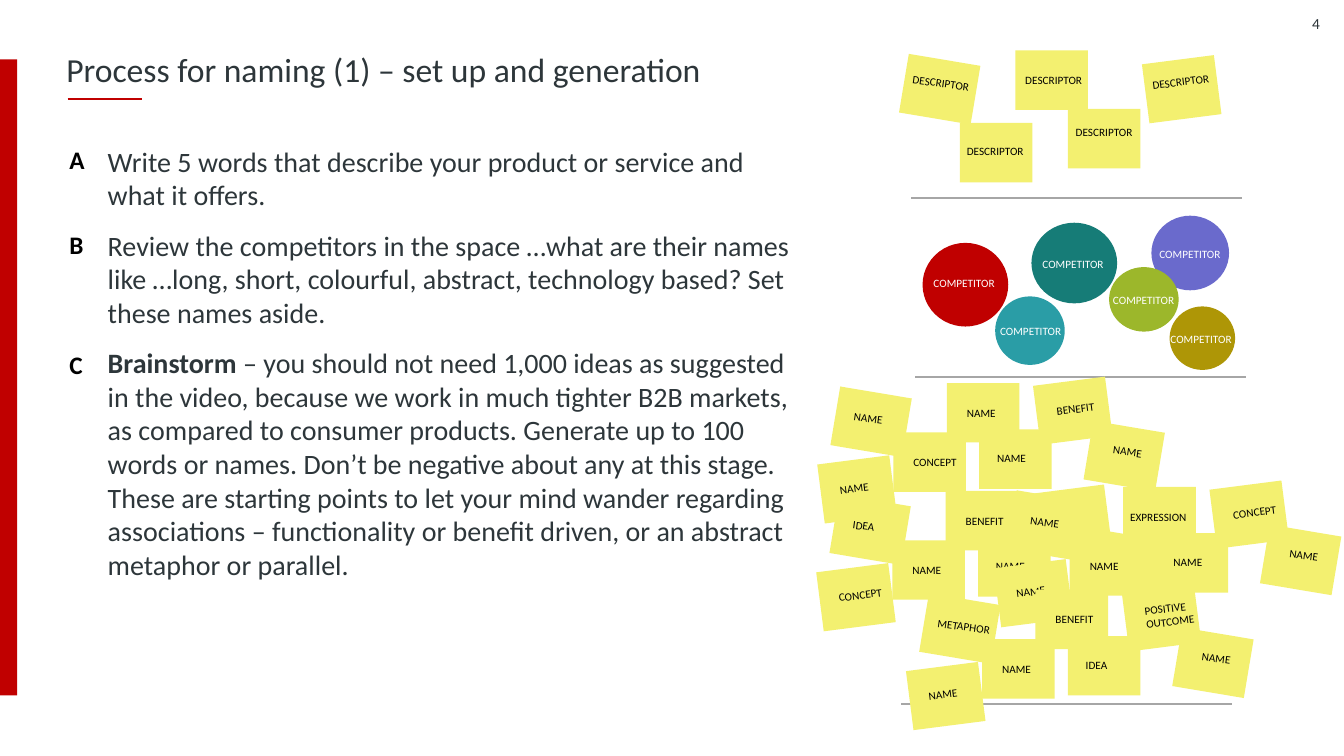
from dataclasses import dataclass

from pptx import Presentation
from pptx.dml.color import RGBColor
from pptx.enum.shapes import MSO_CONNECTOR, MSO_SHAPE
from pptx.enum.text import MSO_ANCHOR, MSO_AUTO_SIZE, PP_ALIGN
from pptx.oxml.ns import qn
from pptx.util import Inches, Pt
from lxml.etree import SubElement

RED, INK, BLACK, WHITE = "C00000", "2D363A", "000000", "FFFFFF"
YELLOW, GREY = "F3F070", "A6A6A6"
NOTE_W, NOTE_H = 0.72, 0.59
RIGHT, LEFT = 9.5, -7.3  # tilts of the notes
LABEL_H = 0.24


@dataclass
class Note:
    x: float
    y: float
    label_x: float
    label_y: float
    label_w: float = 0.82
    tilt: float = 0


@dataclass
class Competitor:
    x: float
    y: float
    w: float
    h: float
    color: str
    label_x: float
    label_y: float


@dataclass
class Cluster:
    x: float
    y: float
    words: list[str]


def rgb(color: str) -> RGBColor:
    return RGBColor.from_string(color)


def add_text(shapes, x: float, y: float, w: float, h: float, paragraphs, *,
             size: float, color: str = INK, bold: bool = False, tilt: float = 0,
             align=None, anchor=MSO_ANCHOR.TOP, grow: bool = False,
             spacing: float | None = None, after: float = 0) -> None:
    """Each paragraph is a string or a list of (text, bold) runs."""
    tb = shapes.add_textbox(Inches(x), Inches(y), Inches(w), Inches(h))
    tb.rotation = tilt
    tf = tb.text_frame
    tf.word_wrap = True
    tf.vertical_anchor = anchor
    if grow:
        tf.auto_size = MSO_AUTO_SIZE.SHAPE_TO_FIT_TEXT
    if isinstance(paragraphs, str):
        paragraphs = [paragraphs]
    for i, runs in enumerate(paragraphs):
        p = tf.add_paragraph() if i else tf.paragraphs[0]
        p.alignment = align
        p.line_spacing = spacing
        p.space_after = Pt(after)
        for text, is_bold in [(runs, bold)] if isinstance(runs, str) else runs:
            r = p.add_run()
            r.text = text
            r.font.name = "Calibri"
            r.font.size = Pt(size)
            r.font.bold = is_bold
            r.font.color.rgb = rgb(color)


def add_label(shapes, x: float, y: float, w: float, text: str,
              color: str = BLACK, tilt: float = 0, h: float = LABEL_H) -> None:
    add_text(shapes, x, y, w, h, text, size=8, color=color, tilt=tilt, grow=True)


def add_block(shapes, kind, x: float, y: float, w: float, h: float,
              color: str, tilt: float = 0) -> None:
    s = shapes.add_shape(kind, Inches(x), Inches(y), Inches(w), Inches(h))
    s.shadow.inherit = False
    s.fill.solid()
    s.fill.fore_color.rgb = rgb(color)
    s.line.fill.background()
    s.rotation = tilt


def add_rule(shapes, x: float, y: float, w: float, color: str) -> None:
    c = shapes.add_connector(MSO_CONNECTOR.STRAIGHT, Inches(x), Inches(y),
                             Inches(x + w), Inches(y))
    c.line.color.rgb = rgb(color)
    c.line.width = Pt(1.5)
    SubElement(c._element.spPr, qn("a:effectLst"))


def add_notes(shapes, notes: list[Note], words: list[str],
              x: float = 0, y: float = 0) -> None:
    for n in notes:
        add_block(shapes, MSO_SHAPE.RECTANGLE, x + n.x, y + n.y,
                  NOTE_W, NOTE_H, YELLOW, n.tilt)
    for n, word in zip(notes, words):
        if not word:
            continue
        # Long words widen the label leftwards; two lines keep its centre
        wider = {"EXPRESSION": 0.13, "METAPHOR": 0.05}.get(word, 0)
        taller = 0.13 if " " in word else 0
        add_label(shapes, x + n.label_x - wider, y + n.label_y - taller / 2,
                  n.label_w + wider, word, h=LABEL_H + taller,
                  tilt=7.9 if n.tilt == RIGHT else n.tilt)


STEPS = [
    "Write 5 words that describe your product or service and what it offers.",
    "Review the competitors in the space …what are their names like …long, "
    "short, colourful, abstract, technology based? Set these names aside.",
    [("Brainstorm", True),
     (" – you should not need 1,000 ideas as suggested in the video, because we "
      "work in much tighter B2B markets, as compared to consumer products. "
      "Generate up to 100 words or names. Don’t be negative about any at this "
      "stage. These are starting points to let your mind wander regarding "
      "associations – functionality or benefit driven, or an abstract metaphor "
      "or parallel.", False)],
]

DESCRIPTORS = [
    Note(9.52, 1.22, 9.49, 1.38),
    Note(8.96, 0.59, 8.95, 0.71, tilt=RIGHT),
    Note(10.07, 0.5, 10.07, 0.68),
    Note(10.59, 1.08, 10.57, 1.19),
    Note(11.36, 0.59, 11.33, 0.69, tilt=LEFT),
]

COMPETITORS = [
    Competitor(9.15, 2.41, 0.85, 0.83, RED, 9.16, 2.69),
    Competitor(9.87, 2.94, 0.69, 0.68, "2A9DA6", 9.82, 3.17),
    Competitor(11.42, 2.14, 0.77, 0.74, "6A6ACC", 11.4, 2.4),
    Competitor(10.23, 2.21, 0.85, 0.8, "167C77", 10.24, 2.5),
    Competitor(11, 2.65, 0.69, 0.64, "9CB72B", 10.94, 2.86),
    Competitor(11.6, 3.04, 0.65, 0.63, "AE9606", 11.51, 3.25),
]

# Places relative to the first note of a cluster
CLUSTER_NOTES = [
    Note(0, 0, 0.09, 0.16, 0.71, RIGHT),
    Note(0.58, 0.4, 0.68, 0.58, 0.68),
    Note(1.11, -0.09, 1.21, 0.09, 0.72),
    Note(1.43, 0.37, 1.51, 0.54, 0.82),
    Note(2, -0.11, 2.1, 0.04, 0.7, LEFT),
    Note(2.51, 0.34, 2.66, 0.49, 0.71, RIGHT),
    Note(-0.14, 0.67, -0.05, 0.82, 0.7, LEFT),
]

CLUSTERS = [
    Cluster(8.28, 3.89, ["NAME", "CONCEPT", "NAME", "NAME", "BENEFIT", "NAME", "NAME"]),
    Cluster(8.27, 4.96, ["IDEA", "NAME", "BENEFIT", "NAME", "NAME", "", "CONCEPT"]),
    Cluster(10.03, 4.92, ["NAME", "NAME", "EXPRESSION", "NAME", "CONCEPT", "NAME", "NAME"]),
    Cluster(9.16, 5.94, ["METAPHOR", "NAME", "BENEFIT", "IDEA", "POSITIVE OUTCOME",
                         "NAME", "NAME"]),
]


def main() -> None:
    prs = Presentation()
    prs.slide_width, prs.slide_height = Inches(13.33), Inches(7.5)
    shapes = prs.slides.add_slide(prs.slide_layouts[6]).shapes

    # Frame, title and page number
    add_block(shapes, MSO_SHAPE.RECTANGLE, 0, 0.59, 0.17, 6.31, RED)
    add_rule(shapes, 0.67, 0.98, 0.74, RED)
    add_text(shapes, 0.56, 0.48, 8.1, 0.48,
             "Process for naming (1) – set up and generation", size=24, spacing=0.9)
    add_text(shapes, 12.65, 0.03, 0.54, 0.4, "4", size=11,
             align=PP_ALIGN.RIGHT, anchor=MSO_ANCHOR.MIDDLE)

    # Steps and their letters
    add_text(shapes, 0.97, 1.38, 7.02, 3.98, STEPS, size=20, after=12)
    for letter, y in zip("ABC", (1.38, 2.23, 3.42)):
        add_text(shapes, 0.59, y, 0.4, 0.4, letter, size=18, color=BLACK,
                 bold=True, grow=True)

    # Dividers on the right
    for x, y in ((9.04, 1.96), (8.94, 6.98), (9.08, 3.74)):
        add_rule(shapes, x, y, 3.28, GREY)

    # Descriptors, competitors and brainstormed notes
    add_notes(shapes, DESCRIPTORS, ["DESCRIPTOR"] * len(DESCRIPTORS))
    for c in COMPETITORS:
        add_block(shapes, MSO_SHAPE.OVAL, c.x, c.y, c.w, c.h, c.color)
    for c in COMPETITORS:
        add_label(shapes, c.label_x, c.label_y, 0.82, "COMPETITOR", WHITE)
    for cluster in CLUSTERS:
        group = shapes.add_group_shape()
        add_notes(group.shapes, CLUSTER_NOTES, cluster.words, cluster.x, cluster.y)

    prs.save("out.pptx")


if __name__ == "__main__":
    main()
